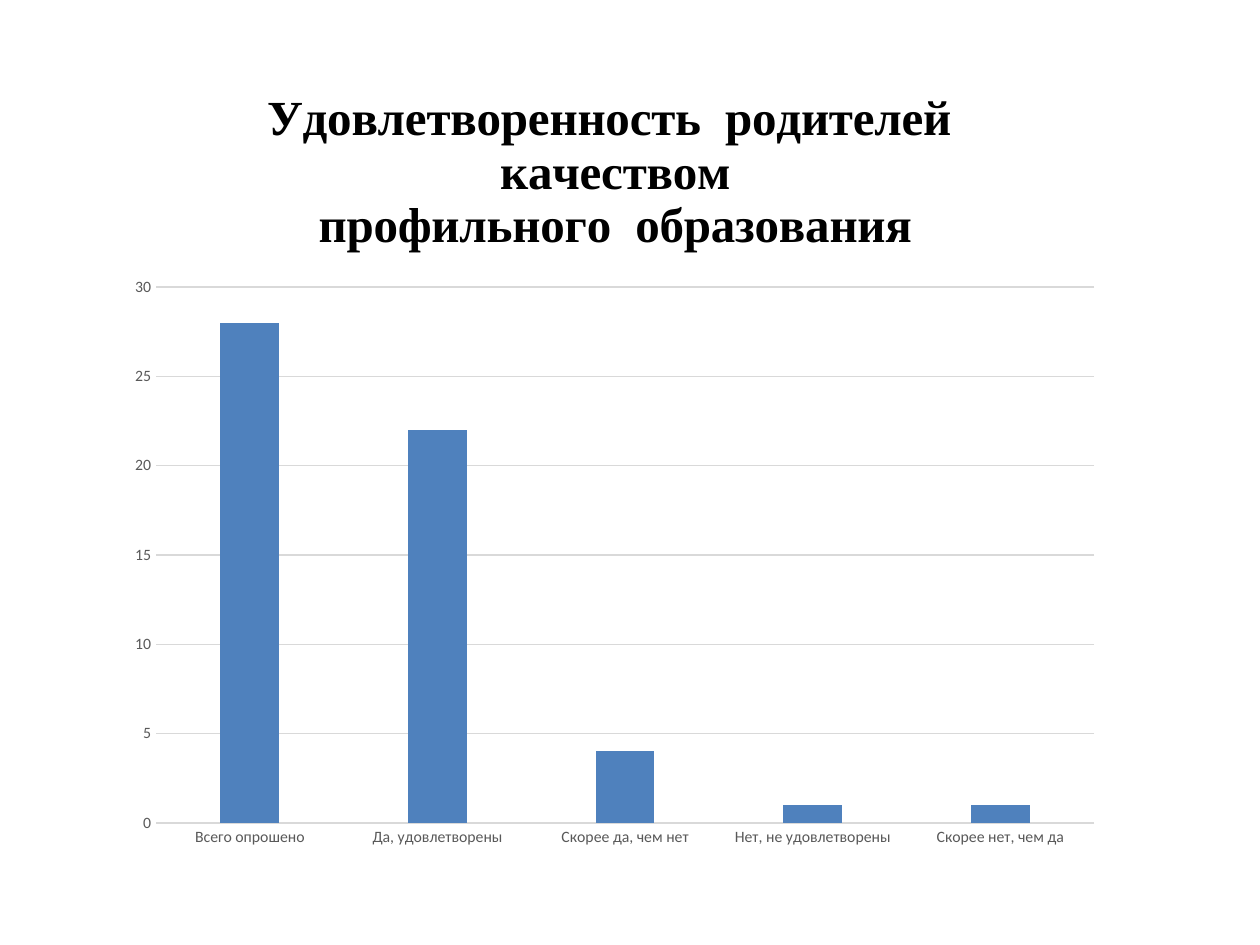
import pptx
import pptx.chart.data
import pptx.dml.color
import pptx.enum.chart
import pptx.enum.text
import pptx.oxml
import pptx.oxml.ns
import pptx.util

Cm, Pt = pptx.util.Cm, pptx.util.Pt
RGBColor = pptx.dml.color.RGBColor

BLACK = RGBColor(0x00, 0x00, 0x00)
GRAY = RGBColor(0x59, 0x59, 0x59)
LIGHT_GRAY = RGBColor(0xD9, 0xD9, 0xD9)
BLUE = RGBColor(0x4F, 0x81, 0xBD)

TITLE_LINES = ["Удовлетворенность  родителей  качеством", "профильного  образования"]
ANSWERS = {
    "Всего опрошено": 28,
    "Да, удовлетворены": 22,
    "Скорее да, чем нет": 4,
    "Нет, не удовлетворены": 1,
    "Скорее нет, чем да": 1,
}
TITLE_FONT = {"name": "Times New Roman", "size": Pt(28), "bold": True}
CHART_FONT = {"name": "Calibri", "size": Pt(10), "bold": False}
AXIS_FONT = {"name": "Calibri", "size": Pt(9), "bold": False}
PLOT_LAYOUT = {"x": 0.04, "y": 0.28, "w": 0.94, "h": 0.67}


def set_font(font, values, color):
    for name, value in values.items():
        setattr(font, name, value)
    font.color.rgb = color


def set_line(line, color):
    line.color.rgb = color
    line.width = Pt(0.75)


deck = pptx.Presentation()
deck.slide_width, deck.slide_height = Cm(25.4), Cm(19.05)
page = deck.slides.add_slide(deck.slide_layouts[6])

data = pptx.chart.data.CategoryChartData()
data.categories = list(ANSWERS)
data.add_series("Series 1", list(ANSWERS.values()))
chart = page.shapes.add_chart(
    pptx.enum.chart.XL_CHART_TYPE.COLUMN_CLUSTERED,
    Cm(2.34), Cm(1.27), Cm(20.12), Cm(16.13), data,
).chart
set_font(chart.font, CHART_FONT, BLACK)
chart.has_legend = False

# Title
chart.has_title = True
title = chart.chart_title.text_frame
for index, line in enumerate(TITLE_LINES):
    para = title.paragraphs[0] if index == 0 else title.add_paragraph()
    para.alignment = pptx.enum.text.PP_ALIGN.CENTER
    set_font(para.font, TITLE_FONT, BLACK)
    span = para.add_run()
    span.text = line
    set_font(span.font, TITLE_FONT, BLACK)

# Columns
plot = chart.plots[0]
plot.gap_width = 219
plot.overlap = -27
plot.vary_by_categories = False
columns = plot.series[0]
columns.format.fill.solid()
columns.format.fill.fore_color.rgb = BLUE

# Axes
for axis in (chart.category_axis, chart.value_axis):
    axis.major_tick_mark = pptx.enum.chart.XL_TICK_MARK.NONE
    axis.minor_tick_mark = pptx.enum.chart.XL_TICK_MARK.NONE
    set_font(axis.tick_labels.font, AXIS_FONT, GRAY)
set_line(chart.category_axis.format.line, LIGHT_GRAY)
values = chart.value_axis
values.minimum_scale, values.maximum_scale, values.major_unit = 0, 30, 5
values.format.line.fill.background()
values.has_major_gridlines = True
set_line(values.major_gridlines.format.line, LIGHT_GRAY)

# Fixed plot area below the title
plot_area = chart._chartSpace.chart.plotArea
for old in plot_area.findall(pptx.oxml.ns.qn("c:layout")):
    plot_area.remove(old)
sizes = "".join(f'<c:{key} val="{value}"/>' for key, value in PLOT_LAYOUT.items())
plot_area.insert(0, pptx.oxml.parse_xml(
    f'<c:layout {pptx.oxml.ns.nsdecls("c")}><c:manualLayout>'
    '<c:layoutTarget val="inner"/><c:xMode val="edge"/><c:yMode val="edge"/>'
    f"{sizes}</c:manualLayout></c:layout>"
))

deck.save("out.pptx")
